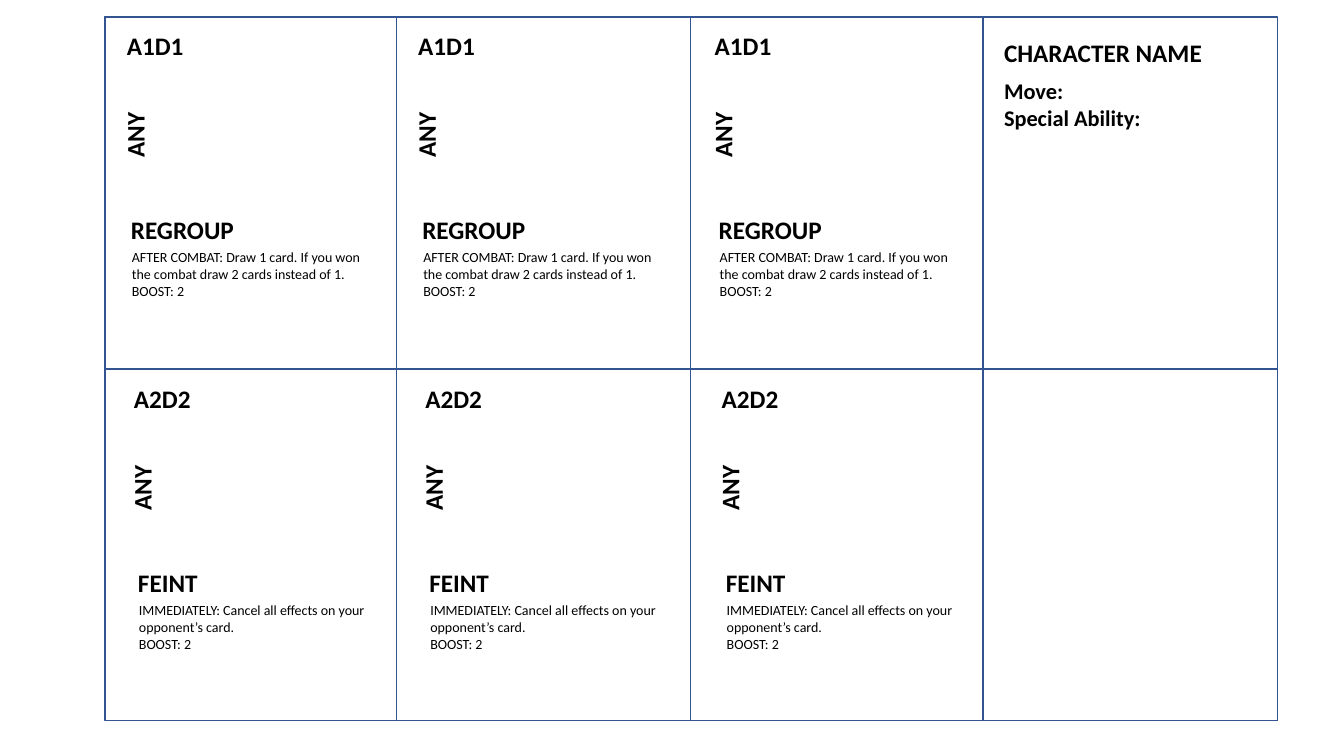
from pptx import Presentation
from pptx.dml.color import RGBColor
from pptx.enum.shapes import MSO_SHAPE as SHAPE
from pptx.enum.text import MSO_AUTO_SIZE as FIT, PP_ALIGN as ALIGN
from pptx.util import Inches, Pt

COLORS = {"line": "325491", "text": "000000"}
FONT = "Calibri"
COLS = [1.04, 3.93, 6.85, 9.75, 12.67]
ROWS = [0.17, 3.66, 7.15]
FRAMES = [(0, 0, 4, 2), (0, 0, 2, 1), (1, 0, 3, 2), (2, 1, 4, 2)]
COL_INSETS = [0.12, 0.12, 0.14]
ROW_INSETS = [(0, 0.08), (0.07, 0.09)]
CARDS = [
    ("A1D1", "REGROUP",
     "AFTER COMBAT: Draw 1 card. If you won the combat draw 2 cards instead of 1.\nBOOST: 2"),
    ("A2D2", "FEINT",
     "IMMEDIATELY: Cancel all effects on your opponent’s card.\nBOOST: 2"),
]


def add_frame(s, left, top, right, bottom):
    x, y = COLS[left], ROWS[top]
    sp = s.shapes.add_shape(SHAPE.RECTANGLE, Inches(x), Inches(y),
                            Inches(COLS[right] - x), Inches(ROWS[bottom] - y))
    sp.shadow.inherit = False
    sp.fill.background()
    sp.line.color.rgb = RGBColor.from_string(COLORS["line"])
    sp.line.width = Pt(1)


def add_text(s, x, y, w, h, text, size=18, bold=True):
    sp = s.shapes.add_textbox(Inches(x), Inches(y), Inches(w), Inches(h))
    tf = sp.text_frame
    tf.word_wrap = True
    tf.auto_size = FIT.SHAPE_TO_FIT_TEXT
    tf.text = text
    for p in tf.paragraphs:
        for r in p.runs:
            r.font.name = FONT
            r.font.size = Pt(size)
            r.font.bold = bold
            r.font.color.rgb = RGBColor.from_string(COLORS["text"])
    return sp


def add_card(s, x, y, stats, title, effect):
    add_text(s, x, y, 0.84, 0.4, stats)
    add_text(s, x + 0.05, y + 2.17, 2.56, 0.61, effect, 10, False)
    add_text(s, x + 0.04, y + 1.83, 2.18, 0.4, title)
    fighter = add_text(s, x - 0.61, y + 0.89, 1.57, 0.4, "ANY")
    fighter.rotation = 270
    fighter.text_frame.paragraphs[0].alignment = ALIGN.CENTER


def add_character(s, x, y):
    add_text(s, x + 0.11, y + 0.15, 2.56, 0.4, "CHARACTER NAME")
    add_text(s, x + 0.11, y + 0.55, 2.56, 0.81, "Move:\nSpecial Ability:", 16)


def main():
    prs = Presentation()
    prs.slide_width, prs.slide_height = Inches(13.33), Inches(7.5)
    s = prs.slides.add_slide(prs.slide_layouts[6])
    for frame in FRAMES:
        add_frame(s, *frame)
    for top, (dx, dy), card in zip(ROWS, ROW_INSETS, CARDS):
        for left, inset in zip(COLS, COL_INSETS):
            add_card(s, left + inset + dx, top + dy, *card)
    add_character(s, COLS[3], ROWS[0])
    prs.save("out.pptx")


if __name__ == "__main__":
    main()
